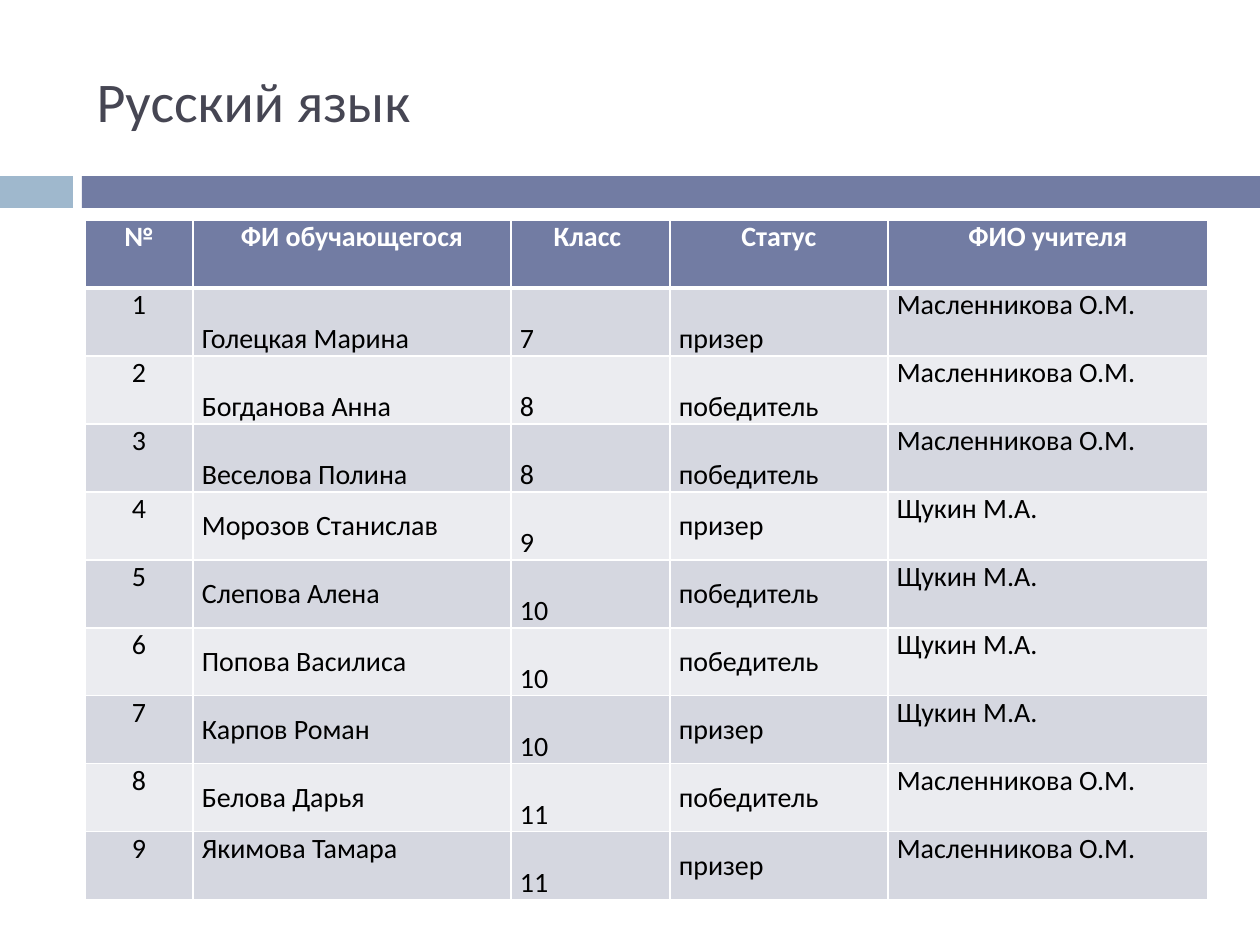
from dataclasses import dataclass

from lxml import etree
from pptx import Presentation
from pptx.dml.color import RGBColor
from pptx.enum.shapes import MSO_SHAPE
from pptx.enum.text import MSO_ANCHOR, PP_ALIGN
from pptx.oxml.ns import qn
from pptx.util import Emu, Pt

RECT = MSO_SHAPE.RECTANGLE
TOP, MID, LOW = MSO_ANCHOR.TOP, MSO_ANCHOR.MIDDLE, MSO_ANCHOR.BOTTOM
LEFT, CENTER, FULL = PP_ALIGN.LEFT, PP_ALIGN.CENTER, PP_ALIGN.JUSTIFY

SCALE = 914400 / 126
FONT = "Calibri"
WHITE, BLACK, INK = "FFFFFF", "000000", "464653"
NAVY, SKY = "727CA3", "9FB8CD"
BANDS = ("D5D7E0", "EBECF0")
ROW = 68
HANG = -58


@dataclass
class Bar:
    left: int
    width: int
    fill: str


@dataclass
class Column:
    head: str
    width: int
    align: PP_ALIGN
    hang: int = 0


@dataclass
class Pupil:
    name: str
    grade: str
    status: str
    tutor: str
    name_pos: MSO_ANCHOR = MID
    status_pos: MSO_ANCHOR = MID


BARS = [Bar(0, 73, SKY), Bar(82, 1178, NAVY)]

COLUMNS = [
    Column("№", 108, CENTER),
    Column("ФИ обучающегося", 318, LEFT, HANG),
    Column("Класс ", 159, LEFT, HANG),
    Column("Статус", 218, LEFT, HANG),
    Column("ФИО учителя", 320, FULL, HANG),
]

WON, PRIZE = "победитель", "призер"
TUTOR_A, TUTOR_B = "Масленникова О.М.", "Щукин М.А."
PUPILS = [
    Pupil("Голецкая Марина", "7", PRIZE, TUTOR_A, LOW, LOW),
    Pupil("Богданова Анна", "8", WON, TUTOR_A, LOW, LOW),
    Pupil("Веселова Полина", "8", WON, TUTOR_A, LOW, LOW),
    Pupil("Морозов Станислав", "9", PRIZE, TUTOR_B),
    Pupil("Слепова Алена", "10", WON, TUTOR_B),
    Pupil("Попова Василиса", "10", WON, TUTOR_B),
    Pupil("Карпов Роман", "10", PRIZE, TUTOR_B),
    Pupil("Белова Дарья", "11", WON, TUTOR_A),
    Pupil("Якимова Тамара", "11", PRIZE, TUTOR_A, TOP),
]


def px(num: int) -> Emu:
    return Emu(round(num * SCALE))


def color(code: str) -> RGBColor:
    return RGBColor.from_string(code)


def write(frame, text: str, *, size=16, ink=BLACK, bold=False, align=LEFT, hang=0) -> None:
    para = frame.paragraphs[0]
    para.alignment = align
    if hang:
        props = para._p.get_or_add_pPr()
        props.set("marL", "0")
        props.set("indent", str(px(hang)))
    run = para.add_run()
    run.text = text
    font = run.font
    font.name, font.size, font.bold = FONT, Pt(size), bold
    font.color.rgb = color(ink)


def draw_bar(slide, bar: Bar) -> None:
    shape = slide.shapes.add_shape(RECT, px(bar.left), px(176), px(bar.width), px(32))
    shape.shadow.inherit = False
    shape.fill.solid()
    shape.fill.fore_color.rgb = color(bar.fill)
    shape.line.fill.background()


def edge(cell, top: int, bottom: int) -> None:
    """White cell borders, placed ahead of the fill; widths in points."""
    props = cell._tc.get_or_add_tcPr()
    sides = (("lnL", 1), ("lnR", 1), ("lnT", top), ("lnB", bottom))
    for spot, (side, width) in enumerate(sides):
        line = etree.Element(qn(f"a:{side}"), w=str(Pt(width)))
        fill = etree.SubElement(line, qn("a:solidFill"))
        etree.SubElement(fill, qn("a:srgbClr"), val=WHITE)
        props.insert(spot, line)


def draw_cell(cell, text: str, *, fill: str, pos=TOP, top=1, bottom=1, **form) -> None:
    cell.margin_left = cell.margin_right = px(9)
    cell.margin_top = cell.margin_bottom = 0
    cell.vertical_anchor = pos
    cell.fill.solid()
    cell.fill.fore_color.rgb = color(fill)
    edge(cell, top, bottom)
    write(cell.text_frame, text, **form)


def draw_table(slide) -> None:
    count = len(PUPILS) + 1
    width = sum(col.width for col in COLUMNS)
    table = slide.shapes.add_table(
        count, len(COLUMNS), px(85), px(220), px(width), px(count * ROW)
    ).table
    for row in table.rows:
        row.height = px(ROW)

    # Header row
    for num, col in enumerate(COLUMNS):
        table.columns[num].width = px(col.width)
        draw_cell(table.cell(0, num), col.head, fill=NAVY, bottom=3,
                  ink=WHITE, bold=True, align=CENTER, hang=col.hang)

    # Pupil rows in two bands
    for row, who in enumerate(PUPILS, 1):
        texts = (str(row), who.name, who.grade, who.status, who.tutor)
        spots = (TOP, who.name_pos, LOW, who.status_pos, TOP)
        for num, (text, pos) in enumerate(zip(texts, spots)):
            draw_cell(table.cell(row, num), text, fill=BANDS[(row - 1) % 2], pos=pos,
                      top=3 if row == 1 else 1, align=COLUMNS[num].align)


def main() -> None:
    deck = Presentation()
    deck.slide_width, deck.slide_height = px(1260), px(945)
    slide = deck.slides.add_slide(deck.slide_layouts[5])

    # Divider bars
    for bar in BARS:
        draw_bar(slide, bar)

    # Title
    title = slide.shapes.title
    title.left, title.top, title.width, title.height = px(84), px(32), px(1124), px(136)
    title.text_frame.vertical_anchor = MID
    write(title.text_frame, "Русский язык", size=32, ink=INK)

    draw_table(slide)
    deck.save("out.pptx")


if __name__ == "__main__":
    main()
